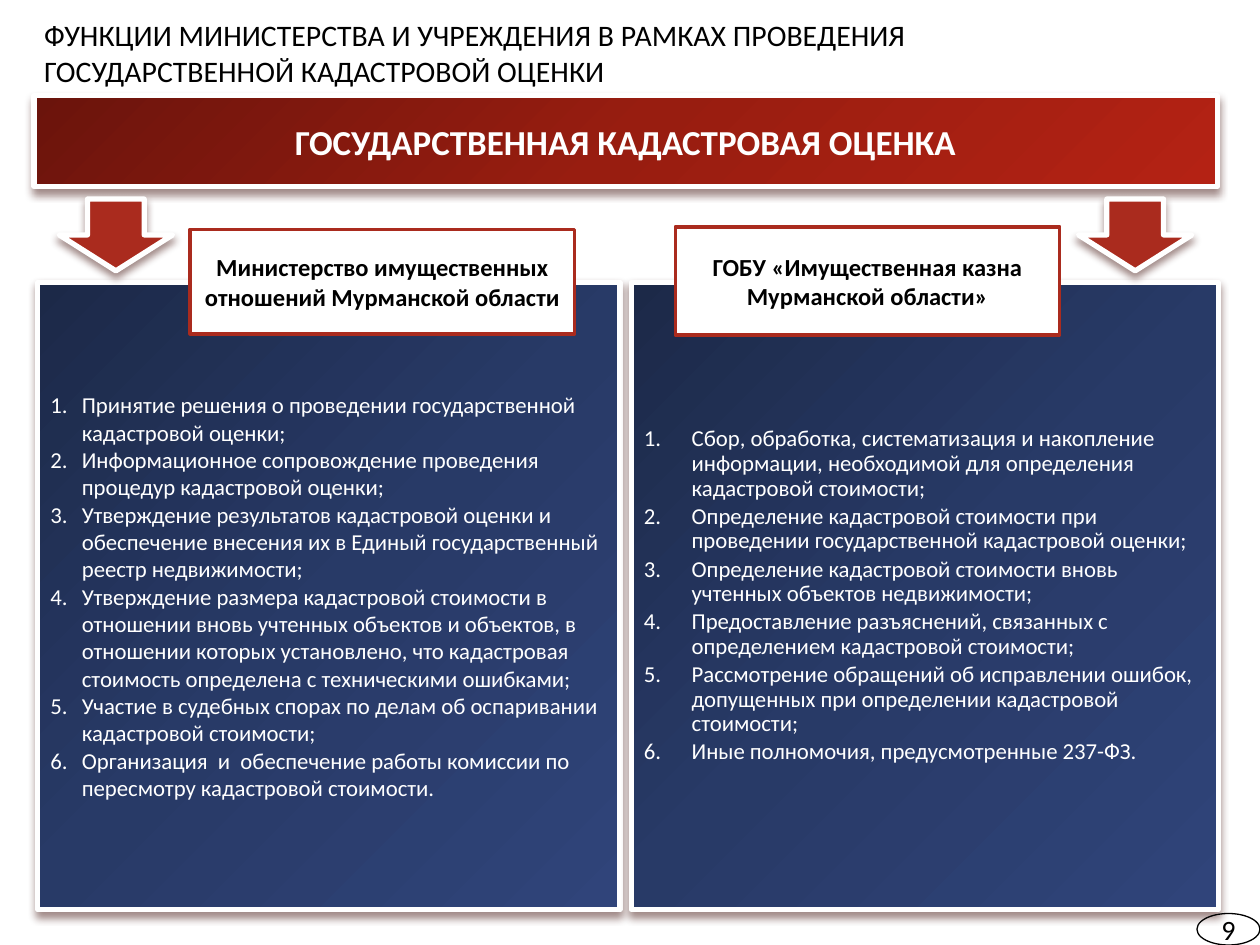
from copy import deepcopy

from lxml.etree import SubElement as Sub
from pptx import Presentation
from pptx.dml.color import RGBColor as RGB
from pptx.enum.shapes import MSO_SHAPE as Form
from pptx.enum.text import MSO_ANCHOR as Anchor, MSO_AUTO_SIZE as Fit, PP_ALIGN as Align
from pptx.oxml.ns import qn
from pptx.util import Inches, Pt

RED = ["6B140C", "981D10", "B42214"]
BLUE = ["1C2948", "283A67", "30447A"]
BRICK, WHITE, BLACK = "AA2B1E", "FFFFFF", "000000"
HEAD = "ФУНКЦИИ МИНИСТЕРСТВА И УЧРЕЖДЕНИЯ В РАМКАХ ПРОВЕДЕНИЯ ГОСУДАРСТВЕННОЙ КАДАСТРОВОЙ ОЦЕНКИ"
DUTIES = [
    "Принятие решения о проведении государственной кадастровой оценки;",
    "Информационное сопровождение проведения процедур кадастровой оценки;",
    "Утверждение результатов кадастровой оценки и обеспечение внесения их в Единый "
    "государственный реестр недвижимости;",
    "Утверждение размера кадастровой стоимости в отношении вновь учтенных объектов и объектов, "
    "в отношении которых установлено, что кадастровая стоимость определена с техническими ошибками;",
    "Участие в судебных спорах по делам об оспаривании кадастровой стоимости;",
    "Организация  и  обеспечение работы комиссии по пересмотру кадастровой стоимости.",
]
TASKS = [
    "Сбор, обработка, систематизация и накопление информации, необходимой для определения "
    "кадастровой стоимости;",
    "Определение кадастровой стоимости при проведении государственной кадастровой оценки;",
    "Определение кадастровой стоимости вновь учтенных объектов недвижимости;",
    "Предоставление разъяснений, связанных с определением кадастровой стоимости;",
    "Рассмотрение обращений об исправлении ошибок, допущенных при определении кадастровой стоимости;",
    "Иные полномочия, предусмотренные 237-ФЗ.",
]


def tint(code):
    """Turn a hex string into a colour."""
    return RGB.from_string(code)


def apply(item, **vals):
    """Set each given value on an item."""
    for key, val in vals.items():
        setattr(item, key, val)


class Page:
    """Holds the style and the slide, on a grid of 100 columns by 75 rows."""

    font = "Calibri"

    def __init__(self, deck):
        """Add a slide with a title and two lists."""
        self.cell = deck.slide_width / 100
        self.slide = deck.slides.add_slide(deck.slide_layouts[3])
        self.title, self.left, self.right = self.slide.placeholders

    def span(self, *grid):
        """Turn grid counts into lengths."""
        return [round(n * self.cell) for n in grid]

    def place(self, item, grid):
        """Move an item to its grid place."""
        apply(item, **dict(zip(("left", "top", "width", "height"), self.span(*grid))))

    def words(self, item, lines, size, color, bold=False, align=Align.CENTER,
              anchor=Anchor.MIDDLE, **form):
        """Fill an item with styled paragraphs."""
        frame = item.text_frame
        apply(frame, word_wrap=True, auto_size=Fit.NONE, vertical_anchor=anchor)
        frame.text = "\n".join(lines)
        for para in frame.paragraphs:
            apply(para, alignment=align, space_before=Pt(0), **form)
            font = para.runs[0].font
            apply(font, name=self.font, size=Pt(size), bold=bold)
            font.color.rgb = tint(color)
        return frame

    def inset(self, frame, *sides):
        """Set the left, top, right and bottom margins."""
        names = ("margin_left", "margin_top", "margin_right", "margin_bottom")
        apply(frame, **dict(zip(names, self.span(*sides))))

    def paint(self, item, fill, edge, width, glow=False):
        """Give an item its fill, line and shadow."""
        item.shadow.inherit = False
        if isinstance(fill, list):
            item.fill.gradient()
            item.fill.gradient_angle = 315
            first = item.element.spPr.find(".//" + qn("a:gs"))
            first.addnext(deepcopy(first))
            for stop, code, pos in zip(item.fill.gradient_stops, fill, (0, 0.5, 1)):
                stop.position = pos
                stop.color.rgb = tint(code)
        elif fill:
            item.fill.solid()
            item.fill.fore_color.rgb = tint(fill)
        else:
            item.fill.background()
        item.line.color.rgb = tint(edge)
        item.line.width = Pt(width)
        if glow:
            shade = Sub(item.element.spPr.find(qn("a:effectLst")), qn("a:outerShdw"),
                        blurRad=str(Pt(4.5)), dist=str(Pt(3)), dir="5400000", rotWithShape="0")
            hue = Sub(shade, qn("a:srgbClr"), val="3D0E09")
            Sub(hue, qn("a:alpha"), val="48000")

    def shape(self, form, grid, fill, edge=WHITE, width=3, glow=False):
        """Add a painted preset shape."""
        item = self.slide.shapes.add_shape(form, *self.span(*grid))
        self.paint(item, fill, edge, width, glow)
        return item

    def head(self, text, grid):
        """Set the slide title."""
        self.place(self.title, grid)
        frame = self.words(self.title, [text], 17, BLACK, align=Align.LEFT, anchor=Anchor.BOTTOM)
        self.inset(frame, 0, 0.5, 0, 2.6)

    def panel(self, item, grid, lines, dent, **form):
        """Turn a list placeholder into a numbered panel."""
        self.place(item, grid)
        self.paint(item, BLUE, WHITE, 3, True)
        frame = self.words(item, lines, 13, WHITE, align=Align.LEFT, **form)
        for para in frame.paragraphs:
            props = para._p.get_or_add_pPr()
            props.set("marL", str(Inches(dent)))
            props.set("indent", str(-Inches(dent)))
            props.insert_element_before(
                props.makeelement(qn("a:buAutoNum"), {"type": "arabicPeriod"}),
                "a:tabLst", "a:defRPr", "a:extLst")

    def label(self, text, grid):
        """Add a framed label."""
        self.words(self.shape(Form.RECTANGLE, grid, WHITE, BRICK, 2), [text], 14, BLACK, True)

    def number(self, text):
        """Add the page number in its oval."""
        self.shape(Form.OVAL, (95, 72.5, 5, 2.5), None, BLACK, 0.75)
        box = self.slide.shapes.add_textbox(*self.span(95, 72.4, 5, 2.7))
        self.inset(self.words(box, [text], 16, BLACK, anchor=Anchor.BOTTOM), 0, 0, 0, 0)


def main():
    """Build the slide and save it."""
    deck = Presentation()
    apply(deck, slide_width=Inches(10), slide_height=Inches(7.5))
    page = Page(deck)
    page.head(HEAD, (3.5, 3.6, 84.1, 6))
    page.panel(page.left, (3, 22.4, 46.2, 49.8), DUTIES, 0.25)
    page.panel(page.right, (50.1, 22.4, 46.6, 49.8), TASKS, 0.38,
               line_spacing=0.9, space_after=Pt(2))
    banner = page.shape(Form.RECTANGLE, (2.7, 7.6, 93.9, 7.2), RED, glow=True)
    page.words(banner, ["ГОСУДАРСТВЕННАЯ КАДАСТРОВАЯ ОЦЕНКА"], 20, WHITE, True)
    for col in (4.7, 85.6):
        page.shape(Form.DOWN_ARROW, (col, 15.8, 9, 5.7), BRICK, glow=True)
    page.label("Министерство имущественных отношений Мурманской области", (15.1, 18.2, 30.5, 8.3))
    page.label("ГОБУ «Имущественная казна Мурманской области»", (53.6, 18, 30.5, 8.6))
    page.number("9")
    deck.save("out.pptx")


if __name__ == "__main__":
    main()
